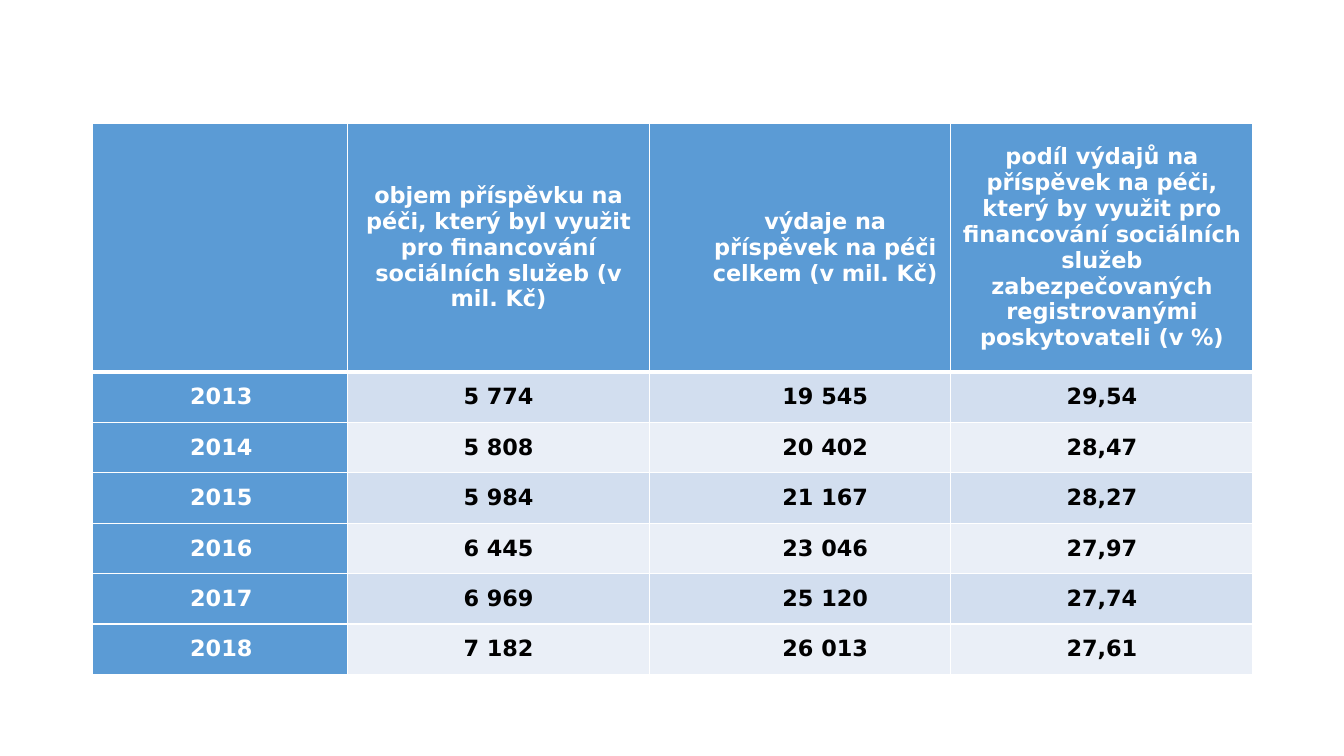
import pptx
import pptx.dml.color
import pptx.enum.text
import pptx.oxml
import pptx.oxml.ns
import pptx.util

Inches = pptx.util.Inches
Pt = pptx.util.Pt

HEADERS = [
    "",
    "objem příspěvku na péči, který byl využit pro financování sociálních služeb (v mil. Kč)",
    "výdaje na příspěvek na péči celkem (v mil. Kč)",
    "podíl výdajů na příspěvek na péči, který by využit pro financování sociálních služeb "
    "zabezpečovaných registrovanými poskytovateli (v %)",
]
ROWS = [
    ["2013", "5 774", "19 545", "29,54"],
    ["2014", "5 808", "20 402", "28,47"],
    ["2015", "5 984", "21 167", "28,27"],
    ["2016", "6 445", "23 046", "27,97"],
    ["2017", "6 969", "25 120", "27,74"],
    ["2018", "7 182", "26 013", "27,61"],
]
COL_WIDTHS = [2.53, 2.99, 2.99, 2.99]
COL_INDENTS = [0.02, 0, 0.5, 0.01]
HEADER_HEIGHT, ROW_HEIGHT = 2.47, 0.5


def rgb(value):
    return pptx.dml.color.RGBColor.from_string(value)


def write(tf, text, font="DejaVu Sans", size=16, color="000000", bold=True, indent=0, before=0):
    p = tf.paragraphs[0]
    p.alignment = pptx.enum.text.PP_ALIGN.CENTER
    p.space_before = Pt(before)
    p._p.get_or_add_pPr().set("marL", str(Inches(indent)))
    r = p.add_run()
    r.text = text
    r.font.name = font
    r.font.size = Pt(size)
    r.font.bold = bold
    r.font.color.rgb = rgb(color)


class Deck:
    accent = "5B9BD5"
    bands = ["D2DEEF", "EAEFF7"]
    white = "FFFFFF"
    black = "000000"

    def __init__(self, width, height):
        self.prs = pptx.Presentation()
        self.prs.slide_width = Inches(width)
        self.prs.slide_height = Inches(height)
        self.slide = self.prs.slides.add_slide(self.prs.slide_layouts[6])

    def borders(self, cell, top=1, bottom=1):
        tc_pr = cell._tc.get_or_add_tcPr()
        for side, width in (("L", 1), ("R", 1), ("T", top), ("B", bottom)):
            tc_pr.append(pptx.oxml.parse_xml(
                f'<a:ln{side} {pptx.oxml.ns.nsdecls("a")} w="{Pt(width)}">'
                f'<a:solidFill><a:srgbClr val="{self.white}"/></a:solidFill></a:ln{side}>'))

    def cell(self, cell, text, row, col):
        cell.vertical_anchor = pptx.enum.text.MSO_ANCHOR.MIDDLE
        cell.margin_left = cell.margin_right = Inches(0.07)
        cell.margin_top = cell.margin_bottom = 0
        self.borders(cell, top=3 if row == 1 else 1, bottom=3 if row == 0 else 1)
        heading = row == 0 or col == 0
        cell.fill.solid()
        cell.fill.fore_color.rgb = rgb(self.accent if heading else self.bands[(row - 1) % 2])
        if text:
            write(cell.text_frame, text, color=self.white if heading else self.black,
                  indent=COL_INDENTS[col], before=6 if col == 0 else 0)

    def table(self, left, top, data):
        heights = [HEADER_HEIGHT] + [ROW_HEIGHT] * (len(data) - 1)
        table = self.slide.shapes.add_table(
            len(data), len(COL_WIDTHS), Inches(left), Inches(top),
            Inches(sum(COL_WIDTHS)), Inches(sum(heights))).table
        for column, width in zip(table.columns, COL_WIDTHS):
            column.width = Inches(width)
        for i, (row, height) in enumerate(zip(table.rows, heights)):
            row.height = Inches(height)
            for j, text in enumerate(data[i]):
                self.cell(table.cell(i, j), text, i, j)


def main():
    deck = Deck(13.33, 7.5)
    deck.table(0.92, 1.22, [HEADERS] + ROWS)
    deck.prs.save("out.pptx")


if __name__ == "__main__":
    main()
